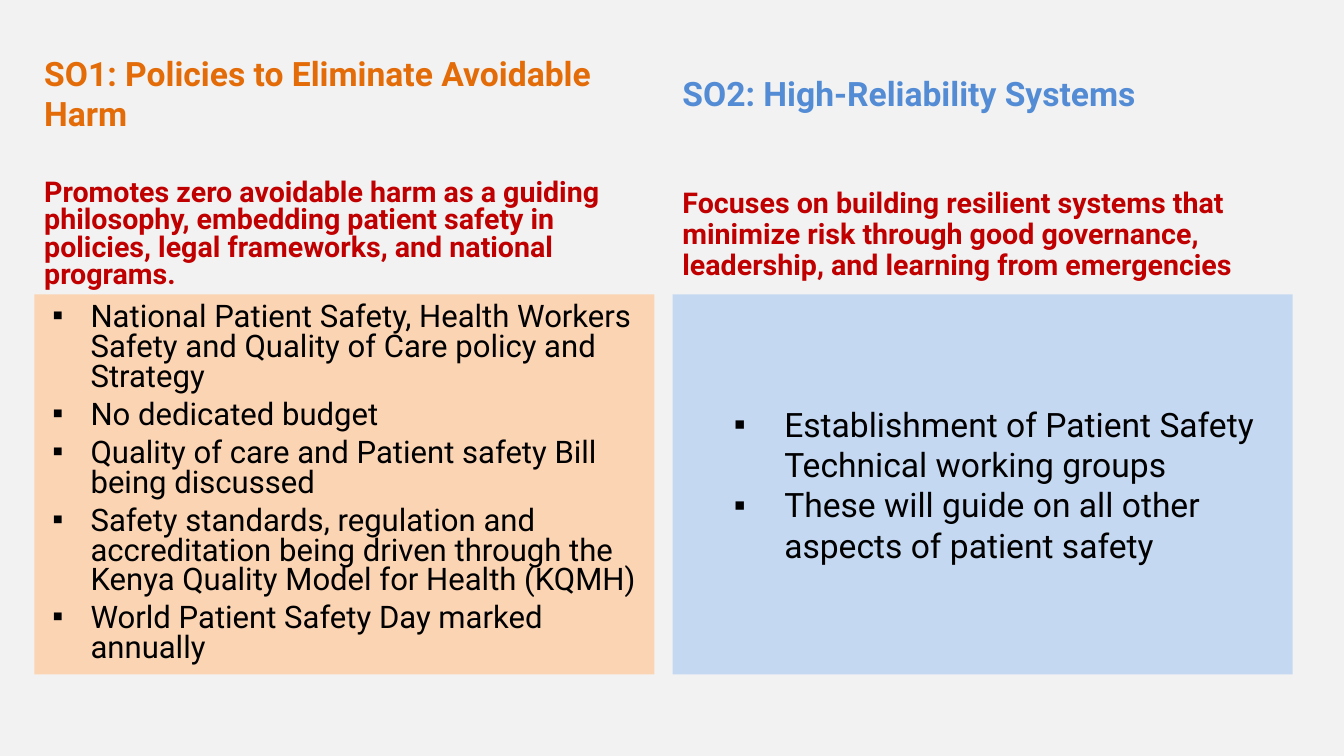
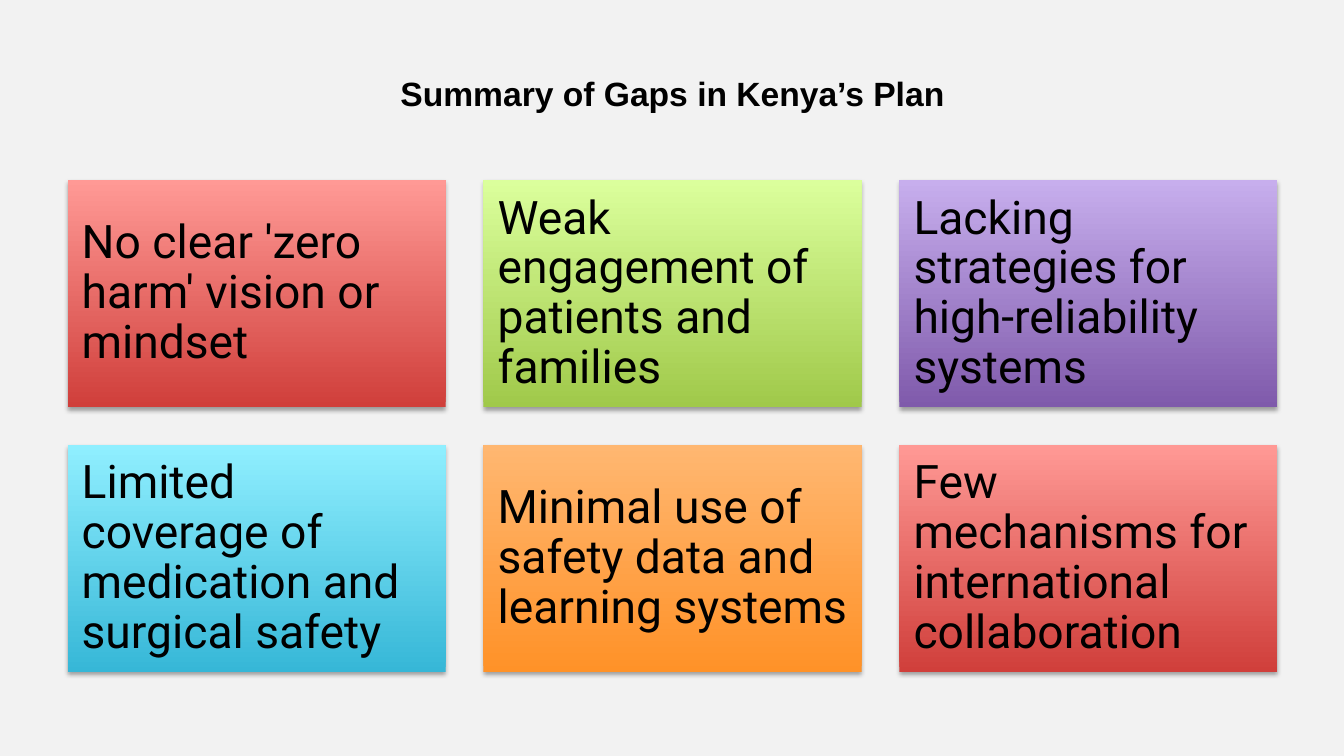
from lxml.etree import SubElement as Sub
from pptx import Presentation
from pptx.dml.color import RGBColor as Rgb
from pptx.enum.shapes import MSO_SHAPE as Kind
from pptx.enum.text import MSO_ANCHOR as Anchor, PP_ALIGN as Align
from pptx.oxml.ns import qn
from pptx.util import Inches, Pt

# Shared look
COLORS = {
    "back": "F2F2F2", "text": "000000", "lead": "C00000",
    "orange": "E36C09", "blue": "538CD5", "peach": "FBD4B4", "sky": "C5D8F1",
}
# Gradients, from bottom to top
GRADS = {
    "red": ("D03F3B", "FF9995"), "green": ("A0C94A", "DBFF9C"),
    "purple": ("7F5AAB", "C7AEED"), "cyan": ("36B7D7", "90EFFF"),
    "amber": ("FF9228", "FFB771"),
}
TOP, TALL = 0.3, 1.25  # title band

# Content
PANELS = [
    dict(title="SO1: Policies to Eliminate Avoidable Harm", color="orange",
         lead="Promotes zero avoidable harm as a guiding philosophy, embedding "
              "patient safety in policies, legal frameworks, and national programs.",
         tight=0.8, fill="peach",
         items=["National Patient Safety, Health Workers Safety and Quality of "
                "Care policy and Strategy",
                "No dedicated budget",
                "Quality of care and Patient safety Bill being discussed",
                "Safety standards, regulation and accreditation being driven "
                "through the Kenya Quality Model for Health (KQMH)",
                "World Patient Safety Day marked annually"],
         look=dict(size=22.2, spacing=0.8, before=5.8, bullet=(0.46, -0.38))),
    dict(title="SO2: High-Reliability Systems", color="blue",
         lead="Focuses on building resilient systems that minimize risk through "
              "good governance, leadership, and learning from emergencies",
         tight=0.9, fill="sky",
         items=["Establishment of Patient Safety Technical working groups",
                "These will guide on all other aspects of patient safety"],
         look=dict(size=24, bullet=(1.01, -0.5))),
]
GAPS = [
    ("No clear 'zero harm' vision or mindset", "red"),
    ("Weak engagement of patients and families", "green"),
    ("Lacking strategies for high-reliability systems", "purple"),
    ("Limited coverage of medication and surgical safety", "cyan"),
    ("Minimal use of safety data and learning systems", "amber"),
    ("Few mechanisms for international collaboration", "red"),
]


def rgb(name):
    return Rgb.from_string(COLORS[name])


def add_bullet(para, left, hang):
    props = para._p.get_or_add_pPr()
    props.set("marL", str(Inches(left)))
    props.set("indent", str(Inches(hang)))
    tint = Sub(props, qn("a:buClr"))
    Sub(tint, qn("a:srgbClr"), val=COLORS["text"])
    Sub(props, qn("a:buFont"), typeface="Arial")
    Sub(props, qn("a:buChar"), char="▪")


def put_text(shape, *lines, size=24, color="text", bold=False, font="Roboto",
             align=Align.LEFT, spacing=None, before=0, bullet=None, pad=(0.1, 0.05)):
    frame = shape.text_frame
    frame.word_wrap = True
    frame.vertical_anchor = Anchor.MIDDLE
    frame.margin_left = frame.margin_right = Inches(pad[0])
    frame.margin_top = frame.margin_bottom = Inches(pad[1])
    for i, line in enumerate(lines):
        para = frame.add_paragraph() if i else frame.paragraphs[0]
        para.alignment = align
        if spacing:
            para.line_spacing = spacing
        if i and before:
            para.space_before = Pt(before)
        if bullet:
            add_bullet(para, *bullet)
        run = para.add_run()
        run.text = line
        run.font.name = font
        run.font.size = Pt(size)
        run.font.bold = bold
        run.font.color.rgb = rgb(color)


def add_label(slide, box, text, **look):
    put_text(slide.shapes.add_textbox(*map(Inches, box)), text, bold=True, **look)


def add_rect(slide, box):
    rect = slide.shapes.add_shape(Kind.RECTANGLE, *map(Inches, box))
    rect.shadow.inherit = False
    rect.line.fill.background()
    return rect


def add_shade(shape):
    effects = shape._element.spPr.find(qn("a:effectLst"))
    shade = Sub(effects, qn("a:outerShdw"), blurRad=str(Pt(3.1)),
                dist=str(Pt(1.8)), dir="5400000", rotWithShape="0")
    tint = Sub(shade, qn("a:srgbClr"), val=COLORS["text"])
    Sub(tint, qn("a:alpha"), val="35000")


def add_panel(slide, left, panel):
    wide = 6.15
    add_label(slide, (left, TOP, wide, TALL), panel["title"], color=panel["color"])
    add_label(slide, (left, 1.75, wide, 1.17), panel["lead"], size=20.4,
              color="lead", spacing=panel["tight"])
    rect = add_rect(slide, (left, 2.92, wide, 3.77))
    rect.fill.solid()
    rect.fill.fore_color.rgb = rgb(panel["fill"])
    put_text(rect, *panel["items"], **panel["look"])


def add_card(slide, box, text, grad):
    card = add_rect(slide, box)
    card.fill.gradient()
    card.fill.gradient_angle = 90
    for stop, tone in zip(card.fill.gradient_stops, GRADS[grad]):
        stop.color.rgb = Rgb.from_string(tone)
    add_shade(card)
    put_text(card, text, size=33, spacing=0.9, pad=(0.14, 0.14))


def add_slide(deck):
    slide = deck.slides.add_slide(deck.slide_layouts[6])
    fill = slide.background.fill
    fill.solid()
    fill.fore_color.rgb = rgb("back")
    return slide


def main():
    deck = Presentation()
    deck.slide_width, deck.slide_height = Inches(13.33), Inches(7.5)

    # Two objectives side by side
    slide = add_slide(deck)
    for i, panel in enumerate(PANELS):
        add_panel(slide, 0.34 + i * 6.33, panel)

    # Grid of gaps
    slide = add_slide(deck)
    add_label(slide, (0.67, TOP, 12, TALL), "Summary of Gaps in Kenya’s Plan",
              font="Arial", align=Align.CENTER)
    wide, tall, gap = 3.75, 2.25, 0.375
    for i, (text, grad) in enumerate(GAPS):
        row, col = divmod(i, 3)
        box = (0.67 + col * (wide + gap), 1.79 + row * (tall + gap), wide, tall)
        add_card(slide, box, text, grad)

    deck.save("out.pptx")


if __name__ == "__main__":
    main()
